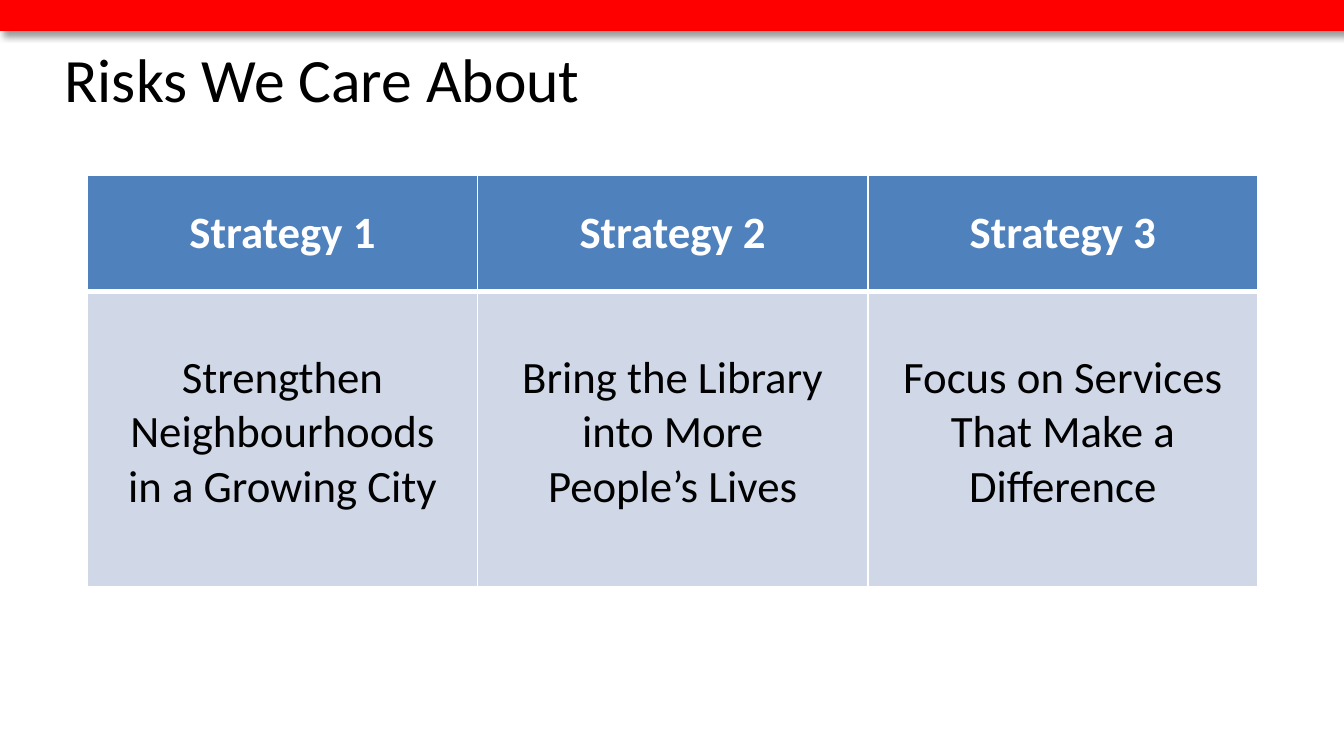
from lxml import etree
from pptx import Presentation
from pptx.dml.color import RGBColor
from pptx.enum.shapes import MSO_SHAPE
from pptx.enum.text import MSO_ANCHOR, PP_ALIGN
from pptx.oxml.ns import qn
from pptx.util import Inches, Pt

RECTANGLE = MSO_SHAPE.RECTANGLE
MIDDLE, TOP = MSO_ANCHOR.MIDDLE, MSO_ANCHOR.TOP
LEFT, CENTER = PP_ALIGN.LEFT, PP_ALIGN.CENTER

BLACK = RGBColor(0x00, 0x00, 0x00)
WHITE = RGBColor(0xFF, 0xFF, 0xFF)
RED = RGBColor(0xFF, 0x00, 0x00)
BLUE = RGBColor(0x4F, 0x81, 0xBD)
PALE_BLUE = RGBColor(0xD0, 0xD8, 0xE8)
FONT = "Calibri"

TITLE = "Risks We Care About"
STRATEGIES = [
    ("Strategy 1", "Strengthen Neighbourhoods in a Growing City"),
    ("Strategy 2", "Bring the Library into More People’s Lives"),
    ("Strategy 3", "Focus on Services That Make a Difference"),
]
# One entry per table row; the body's top margin leaves one line free.
ROW_STYLES = [
    dict(height=0.87, fill=BLUE, color=WHITE, bold=True,
         anchor=MIDDLE, top_margin=0.04, bottom_border=3),
    dict(height=2.2, fill=PALE_BLUE, color=BLACK, bold=False,
         anchor=TOP, top_margin=0.44, bottom_border=1),
]
SLIDE_WIDTH = 10
SLIDE_HEIGHT = SLIDE_WIDTH * 9 / 16
TABLE_LEFT, TABLE_TOP, TABLE_WIDTH = 0.65, 1.3, 8.71


def write(text_frame, text, size, color, alignment, bold=False):
    paragraph = text_frame.paragraphs[0]
    paragraph.alignment = alignment
    run = paragraph.add_run()
    run.text = text
    run.font.name = FONT
    run.font.size = Pt(size)
    run.font.bold = bold
    run.font.color.rgb = color


def set_margins(target, side, top, bottom=0.04):
    target.margin_left = target.margin_right = Inches(side)
    target.margin_top, target.margin_bottom = Inches(top), Inches(bottom)


def add_solid_color(parent, color):
    fill = etree.SubElement(parent, qn("a:solidFill"))
    etree.SubElement(fill, qn("a:srgbClr"), val=str(color))


def set_borders(cell, widths):
    """Draw white borders; widths maps L, R, T and B, in that order, to points."""
    properties = cell._tc.get_or_add_tcPr()
    for index, (side, width) in enumerate(widths.items()):
        line = etree.Element(qn(f"a:ln{side}"), w=str(Pt(width)))
        add_solid_color(line, WHITE)
        properties.insert(index, line)


def add_title(slide):
    title = slide.shapes.title
    title.left, title.top = Inches(0.41), Inches(0.11)
    title.width, title.height = Inches(9), Inches(0.94)
    frame = title.text_frame
    frame.vertical_anchor = MIDDLE
    frame.word_wrap = True
    set_margins(frame, 0.07, 0.04)
    write(frame, TITLE, 33, BLACK, LEFT)


def add_top_bar(slide):
    bar = slide.shapes.add_shape(RECTANGLE, 0, 0, Inches(SLIDE_WIDTH), Inches(0.23))
    bar.fill.solid()
    bar.fill.fore_color.rgb = RED
    bar.line.fill.background()
    bar.shadow.inherit = False
    effects = bar._element.spPr.find(qn("a:effectLst"))
    shadow = etree.SubElement(effects, qn("a:outerShdw"), blurRad=str(Pt(4)),
                              dist=str(Pt(3)), dir=str(45 * 60000),
                              algn="tl", rotWithShape="0")
    color = etree.SubElement(shadow, qn("a:srgbClr"), val=str(BLACK))
    etree.SubElement(color, qn("a:alpha"), val="40000")


def add_strategy_table(slide):
    height = sum(style["height"] for style in ROW_STYLES)
    table = slide.shapes.add_table(
        len(ROW_STYLES), len(STRATEGIES), Inches(TABLE_LEFT), Inches(TABLE_TOP),
        Inches(TABLE_WIDTH), Inches(height)).table
    for column in table.columns:
        column.width = Inches(TABLE_WIDTH / len(STRATEGIES))
    for row, style in enumerate(ROW_STYLES):
        table.rows[row].height = Inches(style["height"])
        top_border = ROW_STYLES[row - 1]["bottom_border"] if row else 1
        for column, strategy in enumerate(STRATEGIES):
            cell = table.cell(row, column)
            cell.fill.solid()
            cell.fill.fore_color.rgb = style["fill"]
            cell.vertical_anchor = style["anchor"]
            set_margins(cell, 0.23, style["top_margin"])
            set_borders(cell, {"L": 1, "R": 1, "T": top_border,
                               "B": style["bottom_border"]})
            write(cell.text_frame, strategy[row], 24, style["color"], CENTER,
                  style["bold"])


def main():
    presentation = Presentation()
    presentation.slide_width = Inches(SLIDE_WIDTH)
    presentation.slide_height = Inches(SLIDE_HEIGHT)
    title_only = presentation.slide_layouts[5]
    slide = presentation.slides.add_slide(title_only)
    add_title(slide)
    add_top_bar(slide)
    add_strategy_table(slide)
    presentation.save("out.pptx")


if __name__ == "__main__":
    main()
